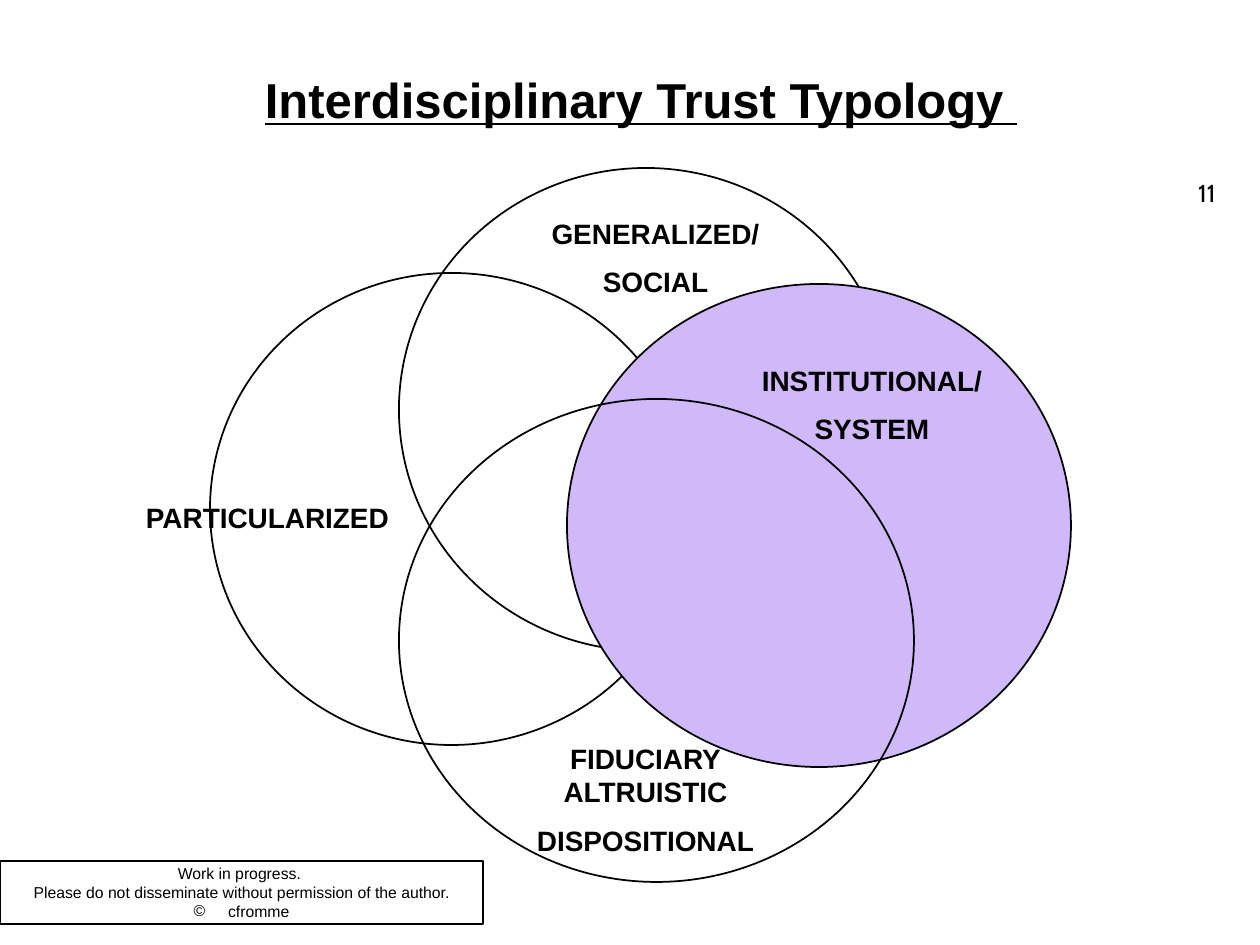
from dataclasses import dataclass
from typing import Optional

from lxml.etree import SubElement
from pptx import Presentation
from pptx.dml.color import RGBColor
from pptx.enum.shapes import MSO_SHAPE as Shape
from pptx.enum.text import MSO_ANCHOR as Anchor, PP_ALIGN as Align
from pptx.oxml.ns import qn
from pptx.util import Emu, Pt

SCALE = 914400 / 126  # EMU in one px
HUES = {"ink": "000000", "paper": "FFFFFF", "focus": "D0B9F8"}
BREAK = "\n"


@dataclass
class Box:
    left: int
    top: int
    width: int
    height: int


@dataclass
class Ring:
    box: Box
    fill: Optional[str] = None


@dataclass
class Label:
    box: Box
    paras: list[str]


def px(n: int) -> Emu:
    return Emu(round(n * SCALE))


def area(box: Box) -> tuple[Emu, ...]:
    return px(box.left), px(box.top), px(box.width), px(box.height)


def hue(name: str) -> RGBColor:
    return RGBColor.from_string(HUES[name])


def write(para, text: str, size: int, align=Align.CENTER, face: str = "Arial",
          bold: bool = False, under: bool = False) -> None:
    para.alignment = align
    for i, part in enumerate(text.split(BREAK)):
        if i:
            para.add_line_break()
        run = para.add_run()
        run.text = part
        font = run.font
        font.name, font.size = face, Pt(size)
        font.bold, font.underline = bold, under
        font.color.rgb = hue("ink")


def paras(frame, count: int) -> list:
    return [frame.paragraphs[0]] + [frame.add_paragraph() for _ in range(count - 1)]


def outline(slide, kind, box: Box, fill: Optional[str], weight: float):
    shape = slide.shapes.add_shape(kind, *area(box))
    shape.shadow.inherit = False
    if fill:
        shape.fill.solid()
        shape.fill.fore_color.rgb = hue(fill)
    else:
        shape.fill.background()
    shape.line.color.rgb = hue("ink")
    shape.line.width = Pt(weight)
    return shape


def text_box(slide, box: Box):
    frame = slide.shapes.add_textbox(*area(box)).text_frame
    frame.word_wrap = True
    return frame


def draw_label(slide, label: Label) -> None:
    frame = text_box(slide, label.box)
    for i, para in enumerate(paras(frame, len(label.paras))):
        if i:
            para.space_before = Pt(8.5)
        write(para, label.paras[i], 16, bold=True)


def mark(para, char: str, indent: int) -> None:
    props = para._p.get_or_add_pPr()
    props.set("marL", str(px(indent)))
    props.set("indent", str(-px(indent)))
    SubElement(props, qn("a:buFont")).set("typeface", "Arial")
    SubElement(props, qn("a:buChar")).set("char", char)


RINGS = [
    Ring(Box(210, 273, 483, 472)),
    Ring(Box(399, 168, 494, 483)),
    Ring(Box(567, 284, 504, 483), "focus"),
    Ring(Box(399, 399, 515, 483)),
]
LABELS = [
    Label(Box(126, 494, 283, 47), ["PARTICULARIZED"]),
    Label(Box(504, 735, 283, 131), ["FIDUCIARY\nALTRUISTIC", "DISPOSITIONAL"]),
    Label(Box(514, 210, 283, 97), ["GENERALIZED/", "SOCIAL"]),
    Label(Box(746, 357, 252, 97), ["INSTITUTIONAL/", "SYSTEM"]),
]
NOTICE = [
    "Work in progress. ",
    "Please do not disseminate without permission of the author.",
    " cfromme",
]


def main() -> None:
    deck = Presentation()
    deck.slide_width, deck.slide_height = px(1260), px(945)
    slide = deck.slides.add_slide(deck.slide_layouts[5])

    # Title
    title = slide.shapes.title
    title.left, title.top, title.width, title.height = area(Box(147, 42, 988, 93))
    frame = title.text_frame
    frame.vertical_anchor = Anchor.BOTTOM
    write(frame.paragraphs[0], "Interdisciplinary Trust Typology ", 28,
          bold=True, under=True)

    # Slide number
    frame = text_box(slide, Box(1155, 168, 73, 50))
    frame.vertical_anchor = Anchor.MIDDLE
    write(frame.paragraphs[0], "11", 14, Align.RIGHT, "Cabin")

    # Overlapping circles and their labels
    for ring in RINGS:
        outline(slide, Shape.OVAL, ring.box, ring.fill, 1)
    for label in LABELS:
        draw_label(slide, label)

    # Notice with a copyright sign as its last bullet
    frame = outline(slide, Shape.RECTANGLE, Box(0, 861, 483, 63),
                    "paper", 0.75).text_frame
    frame.word_wrap = False
    frame.vertical_anchor = Anchor.MIDDLE
    lines = paras(frame, len(NOTICE))
    mark(lines[-1], "©", 30)
    for para, text in zip(lines, NOTICE):
        write(para, text, 9)

    deck.save("out.pptx")


if __name__ == "__main__":
    main()
